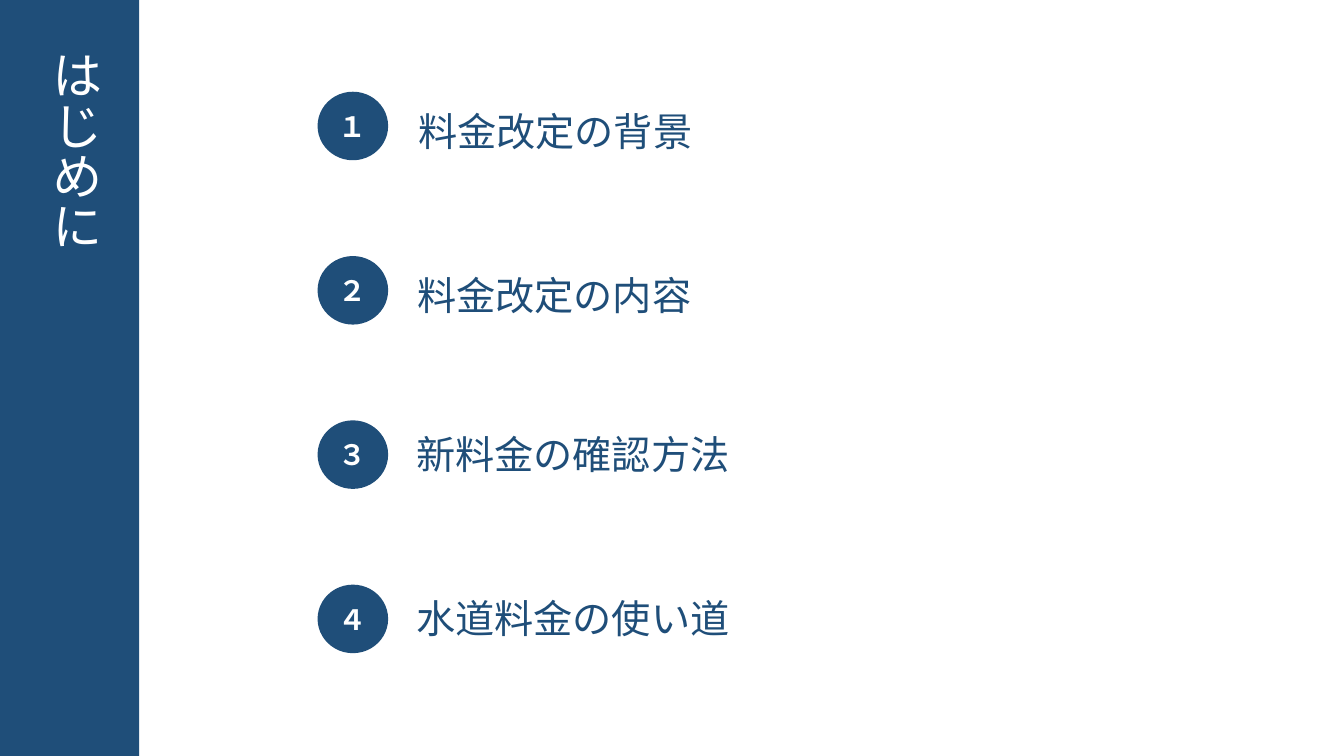
"""Build the introduction slide: a vertical title band and four numbered topics."""
from dataclasses import dataclass

from lxml import etree
from pptx import Presentation
from pptx.dml.color import RGBColor
from pptx.enum.shapes import MSO_SHAPE
from pptx.enum.text import MSO_ANCHOR, MSO_AUTO_SIZE, PP_ALIGN
from pptx.oxml.ns import qn
from pptx.shapes.autoshape import Shape
from pptx.shapes.shapetree import GroupShapes, SlideShapes
from pptx.text.text import TextFrame
from pptx.util import Emu, Pt

RECT, OVAL = MSO_SHAPE.RECTANGLE, MSO_SHAPE.OVAL
MIDDLE, CENTER = MSO_ANCHOR.MIDDLE, PP_ALIGN.CENTER
GROW = MSO_AUTO_SIZE.SHAPE_TO_FIT_TEXT

EMU_PER_PX = 9144
FONT = "Noto Sans CJK JP"
NAVY, WHITE = "1F4E79", "FFFFFF"
BADGE_LEFT, BADGE_TOP, BADGE_PITCH = 315, 91, 163
BADGE_W, BADGE_H = 70, 68
LABEL_H = 57


@dataclass(frozen=True)
class Box:
    left: int
    top: int
    width: int
    height: int

    def emu(self) -> tuple[Emu, Emu, Emu, Emu]:
        return px(self.left), px(self.top), px(self.width), px(self.height)


@dataclass(frozen=True)
class Topic:
    number: str
    label: str
    left: int
    drop: int
    width: int


TOPICS = [
    Topic("１", "料金改定の背景", 405, 11, 564),
    Topic("２", "料金改定の内容", 404, 10, 663),
    Topic("３", "新料金の確認方法", 403, 5, 586),
    Topic("４", "水道料金の使い道", 403, 5, 586),
]


def px(n: int) -> Emu:
    return Emu(n * EMU_PER_PX)


def rgb(color: str) -> RGBColor:
    return RGBColor.from_string(color)


def add_run(tf: TextFrame, text: str, size: int, color: str, bold: bool = False) -> None:
    r = tf.paragraphs[0].add_run()
    r.text = text
    r.font.size = Pt(size)
    r.font.bold = bold
    r.font.color.rgb = rgb(color)
    r.font.name = FONT
    etree.SubElement(r._r.get_or_add_rPr(), qn("a:ea"), typeface=FONT)


def add_filled(shapes: SlideShapes | GroupShapes, kind: MSO_SHAPE, box: Box) -> Shape:
    sp = shapes.add_shape(kind, *box.emu())
    sp.shadow.inherit = False
    sp.fill.solid()
    sp.fill.fore_color.rgb = rgb(NAVY)
    sp.line.fill.background()
    return sp


def add_text(shapes: SlideShapes | GroupShapes, box: Box, text: str, size: int, color: str) -> TextFrame:
    tf = shapes.add_textbox(*box.emu()).text_frame
    tf.word_wrap = True
    tf.auto_size = GROW
    add_run(tf, text, size, color)
    return tf


def add_topic(shapes: SlideShapes, topic: Topic, top: int) -> None:
    group = shapes.add_group_shape().shapes
    label_box = Box(topic.left, top + topic.drop, topic.width, LABEL_H)
    add_text(group, label_box, topic.label, 28, NAVY)
    tf = add_filled(group, OVAL, Box(BADGE_LEFT, top, BADGE_W, BADGE_H)).text_frame
    tf.vertical_anchor = MIDDLE
    tf.paragraphs[0].alignment = CENTER
    add_run(tf, topic.number, 20, WHITE, bold=True)


def main() -> None:
    prs = Presentation()
    prs.slide_width, prs.slide_height = px(1333), px(750)
    s = prs.slides.add_slide(prs.slide_layouts[6])
    add_filled(s.shapes, RECT, Box(0, 0, 138, 750))
    title = add_text(s.shapes, Box(29, 40, 81, 671), "はじめに", 36, WHITE)
    title._txBody.bodyPr.set("vert", "eaVert")
    for i, topic in enumerate(TOPICS):
        add_topic(s.shapes, topic, BADGE_TOP + i * BADGE_PITCH)
    prs.save("out.pptx")


if __name__ == "__main__":
    main()
